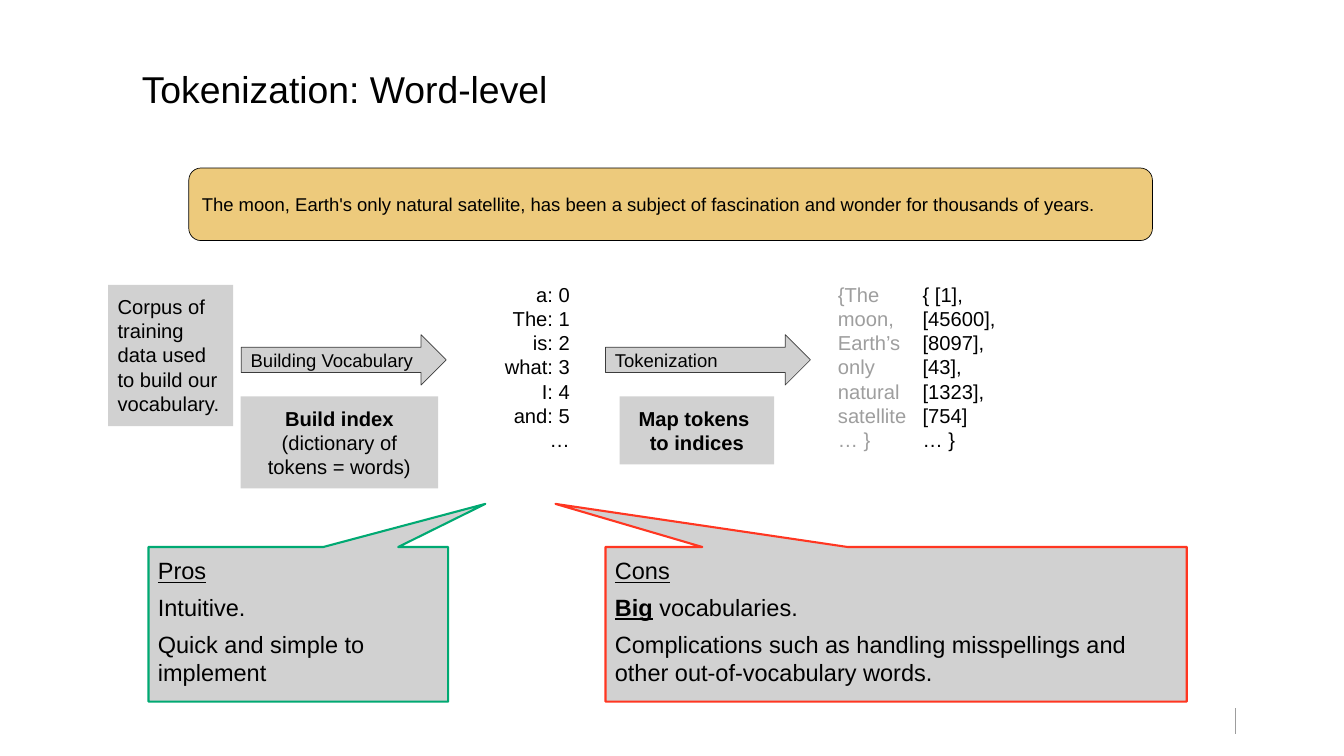
from dataclasses import dataclass

from lxml.etree import SubElement
from pptx import Presentation
from pptx.dml.color import RGBColor
from pptx.enum.shapes import MSO_CONNECTOR, MSO_SHAPE
from pptx.enum.text import MSO_ANCHOR, PP_ALIGN
from pptx.oxml.ns import qn
from pptx.util import Inches, Pt

CELL = 0.25
COLUMNS, ROWS = 80, 45
INSET = 0.56
BLACK, GREY, MUTED, EDGE = "000000", "D1D1D1", "9E9E9E", "3C3C3C"
GREEN, RED, GOLD, RULE = "00A972", "FF3621", "EDCA7C", "9D9D9D"
BODY, LABEL, VERDICT, HEADING = 21.6, 19.8, 25.2, 40


@dataclass
class Box:
    """A region measured in grid columns and rows."""
    left: float
    top: float
    width: float
    height: float

    def inner(self, left, top, width, height):
        """Return a box placed relative to this one."""
        return Box(self.left + left, self.top + top, width, height)

    def lengths(self):
        """Return the box as slide lengths."""
        return [cells(n) for n in (self.left, self.top, self.width, self.height)]


def cells(count):
    """Convert grid cells to a length."""
    return Inches(count * CELL)


def rgb(code):
    """Turn a hex string into a colour."""
    return RGBColor.from_string(code)


def write(holder, paragraphs, size, color=BLACK, align=PP_ALIGN.LEFT,
          anchor=MSO_ANCHOR.TOP, inset=INSET, gap=0, leading=1.0):
    """Fill a shape with paragraphs of (text, style) runs, style from b and u."""
    frame = holder.text_frame
    frame.word_wrap = True
    frame.vertical_anchor = anchor
    frame.margin_left = frame.margin_right = cells(inset)
    frame.margin_top = frame.margin_bottom = cells(inset)
    for index, runs in enumerate(paragraphs):
        paragraph = frame.paragraphs[0] if index == 0 else frame.add_paragraph()
        paragraph.alignment = align
        paragraph.line_spacing = leading
        paragraph.space_before = Pt(gap if index else 0)
        for text, style in runs:
            if text == "\n":
                paragraph.add_line_break()
                continue
            run = paragraph.add_run()
            run.text = text
            run.font.name = "Arial"
            run.font.size = Pt(size)
            run.font.color.rgb = rgb(color)
            run.font.bold = "b" in style
            run.font.underline = "u" in style


def panel(slide, box, kind, fill, line=None, weight=0.75, adjust=()):
    """Draw a filled preset shape."""
    shape = slide.shapes.add_shape(kind, *box.lengths())
    shape.shadow.inherit = False
    shape.fill.solid()
    shape.fill.fore_color.rgb = rgb(fill)
    if line:
        shape.line.color.rgb = rgb(line)
        shape.line.width = Pt(weight)
    else:
        shape.line.fill.background()
    for index, value in enumerate(adjust):
        shape.adjustments[index] = value
    return shape


def heading(slide, box, title):
    """Place the slide title."""
    write(slide.shapes.add_textbox(*box.lengths()), [[(title, "")]], HEADING,
          anchor=MSO_ANCHOR.MIDDLE, inset=0, leading=0.9)


def sentence(slide, box, example):
    """Place the example sentence in a rounded banner."""
    banner = panel(slide, box, MSO_SHAPE.ROUNDED_RECTANGLE, GOLD, BLACK, adjust=[0.167])
    write(banner, [[(example, "")]], LABEL, anchor=MSO_ANCHOR.MIDDLE)


def listing(slide, box, entries, color=BLACK, align=PP_ALIGN.LEFT):
    """Place a column of entries, one to a line."""
    write(slide.shapes.add_textbox(*box.lengths()),
          [[(entry, "")] for entry in entries], BODY, color, align)


def note(slide, box, runs, align=PP_ALIGN.CENTER):
    """Place a grey note."""
    write(panel(slide, box, MSO_SHAPE.RECTANGLE, GREY), [runs], BODY, align=align)


def step(slide, box, label):
    """Place a labelled block arrow."""
    arrow = panel(slide, box, MSO_SHAPE.RIGHT_ARROW, GREY, EDGE, adjust=[0.5, 0.5])
    write(arrow, [[(label, "")]], LABEL, anchor=MSO_ANCHOR.MIDDLE)


def pipeline(slide, box):
    """Place the flow from corpus to vocabulary to token indices."""
    note(slide, box.inner(0, 0.72, 7.44, 8.4),
         [("Corpus of training data used to build our vocabulary.", "")], PP_ALIGN.LEFT)
    listing(slide, box.inner(21.24, 0, 6.8, 11.32),
            ["a: 0", "The: 1", "is: 2", "what: 3", "I: 4", "and: 5", "…"],
            align=PP_ALIGN.RIGHT)
    listing(slide, box.inner(42.88, 0, 6.8, 11.32),
            ["{The", "moon,", "Earth’s", "only", "natural", "satellite", "… }"], MUTED)
    listing(slide, box.inner(47.92, 0, 6.12, 11.32),
            ["{ [1],", "[45600],", "[8097],", "[43],", "[1323],", "[754]", "… }"])
    for left, label in ((7.92, "Building Vocabulary"), (29.6, "Tokenization")):
        step(slide, box.inner(left, 3.68, 12.2, 3), label)
    note(slide, box.inner(7.88, 7.36, 11.76, 5.48),
         [("Build index", "b"), (" (dictionary of tokens = words)", "")])
    note(slide, box.inner(30.44, 7.36, 9.2, 4.04),
         [("Map tokens ", "b"), ("\n", ""), ("to indices", "b")])


def verdict(slide, box, color, pointer, paragraphs):
    """Place a callout that points up to the vocabulary."""
    callout = panel(slide, box, MSO_SHAPE.RECTANGULAR_CALLOUT, GREY, color, 2.25, pointer)
    write(callout, paragraphs, VERDICT, gap=9)


def footer_rule(slide, box):
    """Draw the short upright rule at the foot of the slide."""
    left, top, _, height = box.lengths()
    rule = slide.shapes.add_connector(MSO_CONNECTOR.STRAIGHT, left, top, left, top + height)
    rule.line.color.rgb = rgb(RULE)
    rule.line.width = Pt(1)
    SubElement(rule._element.spPr, qn("a:effectLst"))


def main():
    """Build and save the slide."""
    deck = Presentation()
    deck.slide_width, deck.slide_height = cells(COLUMNS), cells(ROWS)
    slide = deck.slides.add_slide(deck.slide_layouts[6])
    footer_rule(slide, Box(73.52, 42.16, 0, 1.52))
    sentence(slide, Box(11.24, 10, 57.36, 4.32),
             "The moon, Earth's only natural satellite, has been a subject of "
             "fascination and wonder for thousands of years.")
    heading(slide, Box(8.44, 3.52, 62.96, 3.84), "Tokenization: Word-level")
    pipeline(slide, Box(6.44, 16.24, 54.04, 12.84))
    verdict(slide, Box(8.84, 32.56, 17.84, 9.2), GREEN, (0.624, -0.779),
            [[("Pros", "u")], [("Intuitive.", "")],
             [("Quick and simple to implement", "")]])
    verdict(slide, Box(36.04, 32.56, 34.6, 9.2), RED, (-0.586, -0.779),
            [[("Cons", "u")], [("Big", "bu"), (" vocabularies.", "")],
             [("Complications such as handling misspellings and other "
               "out-of-vocabulary words.", "")]])
    deck.save("out.pptx")


if __name__ == "__main__":
    main()
